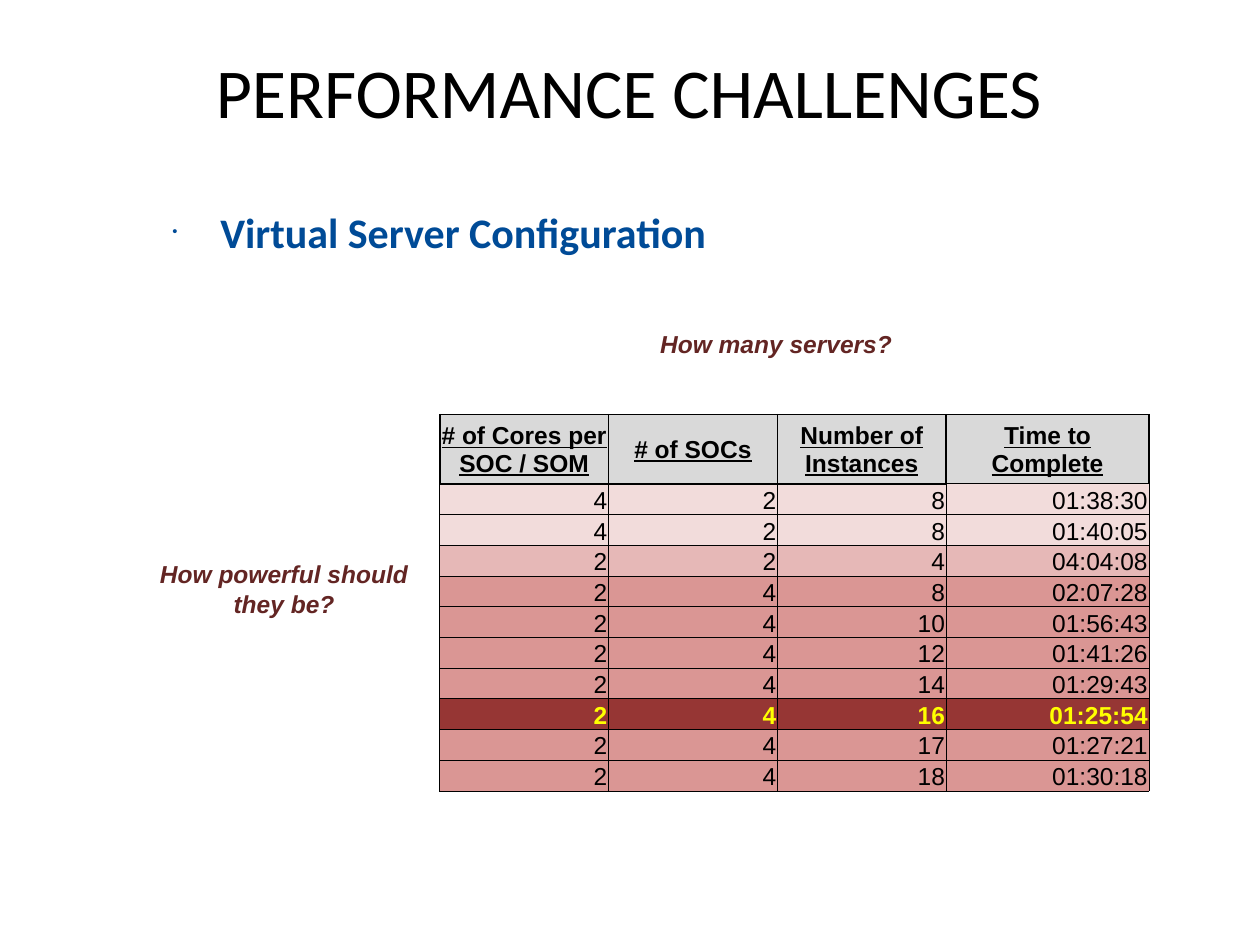
from lxml.etree import SubElement
from pptx import Presentation
from pptx.dml.color import RGBColor
from pptx.enum.shapes import MSO_SHAPE
from pptx.enum.text import MSO_ANCHOR, MSO_AUTO_SIZE, PP_ALIGN
from pptx.oxml.ns import qn
from pptx.util import Inches, Pt

UNIT = Inches(0.1)
COLS, ROWS = 100, 75

HEAD = ["# of Cores per SOC / SOM", "# of SOCs", "Number of Instances", "Time to Complete"]
RUNS = [
    (4, 2, 8, "01:38:30", "F2DCDB"),
    (4, 2, 8, "01:40:05", "F2DCDB"),
    (2, 2, 4, "04:04:08", "E6B8B7"),
    (2, 4, 8, "02:07:28", "DA9694"),
    (2, 4, 10, "01:56:43", "DA9694"),
    (2, 4, 12, "01:41:26", "DA9694"),
    (2, 4, 14, "01:29:43", "DA9694"),
    (2, 4, 16, "01:25:54", "963634"),
    (2, 4, 17, "01:27:21", "DA9694"),
    (2, 4, 18, "01:30:18", "DA9694"),
]
BEST = "963634"


def span(count):
    return round(count * UNIT)


def place(box):
    return [span(side) for side in box]


def color(code):
    return RGBColor.from_string(code)


def paint(target, code):
    target.fill.solid()
    target.fill.fore_color.rgb = color(code)


def write(frame, text, size, name, code, align, **style):
    para = frame.paragraphs[0]
    para.text = text
    para.alignment = align
    font = para.font
    font.size, font.name, font.color.rgb = Pt(size), name, color(code)
    for key, value in style.items():
        setattr(font, key, value)


def title(slide, box):
    frame = slide.shapes.add_textbox(*place(box)).text_frame
    frame.word_wrap = True
    frame.vertical_anchor = MSO_ANCHOR.MIDDLE
    write(frame, "PERFORMANCE CHALLENGES", 40, "Calibri", "000000", PP_ALIGN.CENTER)


def topic(slide, box):
    frame = slide.shapes.add_textbox(*place(box)).text_frame
    frame.word_wrap = True
    frame.margin_top = span(4.2)
    props = frame.paragraphs[0]._p.get_or_add_pPr()
    props.set("marL", str(span(3.8)))
    props.set("indent", str(-span(3.8)))
    SubElement(props, qn("a:buSzPct"), val="35000")
    SubElement(props, qn("a:buFont"), typeface="Arial")
    SubElement(props, qn("a:buChar"), char="•")
    write(frame, "Virtual Server Configuration", 24, "Calibri", "004B97", PP_ALIGN.LEFT, bold=True)


def label(slide, box, text, align, wrap):
    shape = slide.shapes.add_shape(MSO_SHAPE.RECTANGLE, *place(box))
    shape.shadow.inherit = False
    shape.line.fill.background()
    paint(shape, "FFFFFF")
    tint = shape.fill._xPr.find(qn("a:solidFill"))[0]
    SubElement(tint, qn("a:alpha"), val="38000")
    frame = shape.text_frame
    frame.word_wrap = wrap
    frame.auto_size = MSO_AUTO_SIZE.SHAPE_TO_FIT_TEXT
    frame.vertical_anchor = MSO_ANCHOR.TOP
    write(frame, text, 14, "Arial", "632523", align, bold=True, italic=True)


def edge(cell, side, width):
    props = cell._tc.get_or_add_tcPr()
    line = SubElement(props, qn(f"a:ln{side}"), w=str(Pt(width)))
    fill = SubElement(line, qn("a:solidFill"))
    SubElement(fill, qn("a:srgbClr"), val="000000")


def fill_cell(cell, text, back, anchor, widths, *look, **style):
    cell.margin_left = cell.margin_right = cell.margin_top = span(0.1)
    cell.margin_bottom = 0
    cell.vertical_anchor = anchor
    for side, width in zip("LRTB", widths):
        edge(cell, side, width)
    paint(cell, back)
    write(cell.text_frame, str(text), 14, "Arial", *look, **style)


def results(slide, box):
    left, top, width, height = box
    grid = slide.shapes.add_table(len(RUNS) + 1, len(HEAD), *place(box)).table
    grid.horz_banding = False
    last = len(HEAD) - 1
    for col, part in zip(grid.columns, (13.4, 13.4, 13.4, 16.1)):
        col.width = span(part)
    first = 5.5
    for pos, row in enumerate(grid.rows):
        row.height = span((height - first) / len(RUNS) if pos else first)
    for col, text in enumerate(HEAD):
        base = 0.5 if col == last else 1
        fill_cell(grid.cell(0, col), text, "D9D9D9", MSO_ANCHOR.MIDDLE, (1, 1, 1, base),
                  "000000", PP_ALIGN.CENTER, bold=True, underline=True)
    for row, (*vals, back) in enumerate(RUNS, 1):
        best = back == BEST
        ink = "FFFF00" if best else "000000"
        for col, text in enumerate(vals):
            roof = 1 if row == 1 and col < last else 0.5
            fill_cell(grid.cell(row, col), text, back, MSO_ANCHOR.BOTTOM, (0.5, 0.5, roof, 0.5),
                      ink, PP_ALIGN.RIGHT, bold=best)


def main():
    deck = Presentation()
    deck.slide_width, deck.slide_height = span(COLS), span(ROWS)
    slide = deck.slides.add_slide(deck.slide_layouts[6])
    title(slide, (12.7, 0.9, 74.4, 12.5))
    topic(slide, (12.7, 12.2, 79.1, 49.5))
    results(slide, (34.9, 32.9, 56.3, 29.8))
    label(slide, (51.4, 25.6, 20.5, 3.4), "How many servers?", PP_ALIGN.LEFT, False)
    label(slide, (11.4, 43.9, 22.3, 5.7), "How powerful should they be?", PP_ALIGN.CENTER, True)
    deck.save("out.pptx")


if __name__ == "__main__":
    main()
